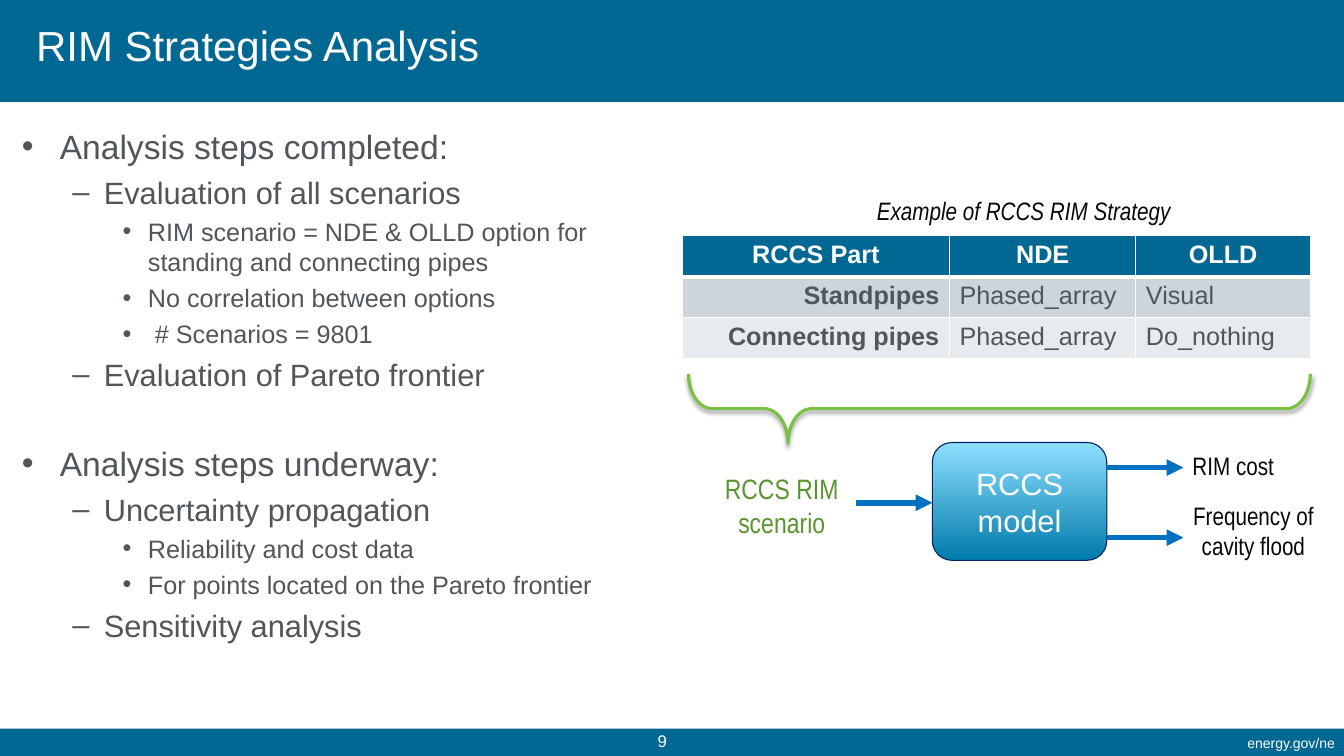
from lxml import etree
from pptx import Presentation
from pptx.dml.color import RGBColor
from pptx.enum.shapes import MSO_CONNECTOR, MSO_SHAPE
from pptx.enum.text import MSO_ANCHOR, PP_ALIGN
from pptx.oxml.ns import qn
from pptx.util import Pt

COLORS = {
    "blue": "006892", "white": "FFFFFF", "gray": "50565C", "black": "080808",
    "band_dark": "CCD4DC", "band_light": "E7EBEE", "arrow": "0070C0",
    "brace": "7AC143", "green": "5B9330", "outline": "002060",
    "model_bottom": "007BAB", "model_top": "8EDFFF", "shadow": "000000",
}
LEFT, CENTER, RIGHT = PP_ALIGN.LEFT, PP_ALIGN.CENTER, PP_ALIGN.RIGHT

# Content: (level, text)
STEPS_COMPLETED = [
    (0, "Analysis steps completed:"),
    (1, "Evaluation of all scenarios"),
    (2, "RIM scenario = NDE & OLLD option for standing and connecting pipes"),
    (2, "No correlation between options"),
    (2, " # Scenarios = 9801"),
    (1, "Evaluation of Pareto frontier"),
]
STEPS_UNDERWAY = [
    (0, "Analysis steps underway:"),
    (1, "Uncertainty propagation"),
    (2, "Reliability and cost data"),
    (2, "For points located on the Pareto frontier"),
    (1, "Sensitivity analysis"),
]
# Level formats: size, indent, hanging, bullet
LEVELS = [(24, 27, 27, "•"), (22, 58.5, 22.5, "–"), (18, 90, 18, "•")]
STRATEGY = [
    ("RCCS Part", "NDE", "OLLD"),
    ("Standpipes", "Phased_array", "Visual"),
    ("Connecting pipes", "Phased_array", "Do_nothing"),
]
COLUMN_WIDTHS = [190.8, 133.2, 124.6]
ROW_HEIGHT = 29.2
ROW_FILLS = ["blue", "band_dark", "band_light"]

# Labels: box, lines, alignment, wrap, font format
NARROW = {"name": "Arial Narrow", "size": 18, "color": "black"}
LABELS = [
    ((619.2, 136.1, 226.8, 26.6), ["Example of RCCS RIM Strategy"], LEFT, False,
     NARROW | {"italic": True}),
    ((510.5, 333.4, 95.8, 49.7), ["RCCS RIM", "scenario"], CENTER, False,
     NARROW | {"size": 20, "color": "green"}),
    ((833, 318.2, 95.8, 33.8), ["RIM cost"], CENTER, False, NARROW),
    ((839.5, 353.5, 111.6, 51.1), ["Frequency of cavity flood"], CENTER, True, NARROW),
    ((575.3, 521.3, 385.2, 18.7), ["energy.gov/ne"], RIGHT, True,
     {"size": 10, "color": "white"}),
    ((453.6, 518.4, 38.9, 21.6), ["9"], CENTER, True, {"size": 12, "color": "white"}),
]
MODEL_BOX = (666, 316.1, 124.6, 84.2)
ARROW_LENGTH = 54.7


def rgb(name):
    return RGBColor.from_string(COLORS[name])


def points(values):
    return [Pt(value) for value in values]


def add_run(paragraph, text, **formats):
    run = paragraph.add_run()
    run.text = text
    for key, value in ({"name": "Arial"} | formats).items():
        if key == "color":
            run.font.color.rgb = rgb(value)
        else:
            setattr(run.font, key, Pt(value) if key == "size" else value)


def add_text(slide, box, lines, alignment, wrap, formats):
    frame = slide.shapes.add_textbox(*points(box)).text_frame
    frame.word_wrap = wrap
    for index, line in enumerate(lines):
        paragraph = frame.add_paragraph() if index else frame.paragraphs[0]
        paragraph.alignment = alignment
        add_run(paragraph, line, **formats)
    return frame


def add_shape(slide, kind, box, fill=None, line=None, width=0):
    shape = slide.shapes.add_shape(kind, *points(box))
    shape.shadow.inherit = False
    if fill:
        shape.fill.solid()
        shape.fill.fore_color.rgb = rgb(fill)
    else:
        shape.fill.background()
    if line:
        shape.line.color.rgb = rgb(line)
        shape.line.width = Pt(width)
    else:
        shape.line.fill.background()
    return shape


def add_bullet(slide_paragraph, level):
    size, indent, hanging, bullet = LEVELS[level]
    properties = slide_paragraph._p.get_or_add_pPr()
    properties.set("marL", str(Pt(indent)))
    properties.set("indent", str(-Pt(hanging)))
    etree.SubElement(properties, qn("a:buFont"), typeface="Arial")
    etree.SubElement(properties, qn("a:buChar"), char=bullet)


def add_arrow(slide, x, y):
    arrow = slide.shapes.add_connector(
        MSO_CONNECTOR.STRAIGHT, *points((x, y, x + ARROW_LENGTH, y)))
    arrow.line.color.rgb = rgb("arrow")
    arrow.line.width = Pt(4)
    etree.SubElement(arrow.line._get_or_add_ln(), qn("a:tailEnd"), type="triangle")
    etree.SubElement(arrow._element.spPr, qn("a:effectLst"))


def add_borders(cell, bottom_width):
    properties = cell._tc.get_or_add_tcPr()
    widths = {"a:lnL": 1, "a:lnR": 1, "a:lnT": 1, "a:lnB": bottom_width}
    for position, (tag, width) in enumerate(widths.items()):
        border = etree.Element(qn(tag), w=str(Pt(width)))
        solid = etree.SubElement(border, qn("a:solidFill"))
        etree.SubElement(solid, qn("a:srgbClr"), val=COLORS["white"])
        properties.insert(position, border)


presentation = Presentation()
presentation.slide_width, presentation.slide_height = Pt(960), Pt(540)
slide = presentation.slides.add_slide(presentation.slide_layouts[6])

# Header and footer bands, title
for band in [(0, 0, 960, 72.7), (0, 520.5, 960, 19.5)]:
    add_shape(slide, MSO_SHAPE.RECTANGLE, band, "blue")
title = add_text(slide, (18.7, 0, 594.7, 71.3), ["RIM Strategies Analysis"], LEFT,
                 True, {"size": 30, "color": "white"})
title.vertical_anchor = MSO_ANCHOR.MIDDLE
title.paragraphs[0].line_spacing = Pt(28)

# Analysis steps
body = slide.shapes.add_textbox(*points((8.6, 86.4, 471.6, 401))).text_frame
body.word_wrap = True
for index, (level, text) in enumerate(STEPS_COMPLETED + STEPS_UNDERWAY):
    paragraph = body.add_paragraph() if index else body.paragraphs[0]
    size = LEVELS[level][0]
    section_break = index == len(STEPS_COMPLETED)
    paragraph.level = level
    paragraph.space_before = Pt(36 if section_break else round(size * 0.23, 1))
    add_bullet(paragraph, level)
    add_run(paragraph, text, size=size, color="gray")

# Strategy table
table = slide.shapes.add_table(
    len(STRATEGY), len(COLUMN_WIDTHS),
    *points((487.4, 168.5, sum(COLUMN_WIDTHS), ROW_HEIGHT * len(STRATEGY)))).table
for column, width in zip(table.columns, COLUMN_WIDTHS):
    column.width = Pt(width)
for row, texts in enumerate(STRATEGY):
    table.rows[row].height = Pt(ROW_HEIGHT)
    header = row == 0
    for column, text in enumerate(texts):
        cell = table.cell(row, column)
        cell.fill.solid()
        cell.fill.fore_color.rgb = rgb(ROW_FILLS[row])
        add_borders(cell, 3 if header else 1)
        paragraph = cell.text_frame.paragraphs[0]
        paragraph.alignment = CENTER if header else LEFT if column else RIGHT
        add_run(paragraph, text, size=18, bold=header or column == 0,
                color="white" if header else "gray")

# Model box with its input and outputs
model = add_shape(slide, MSO_SHAPE.ROUNDED_RECTANGLE, MODEL_BOX, None, "outline", 0.75)
model.fill.gradient()
model.fill.gradient_angle = 90
for stop, color in zip(model.fill.gradient_stops, ["model_bottom", "model_top"]):
    stop.color.rgb = rgb(color)
model.text_frame.word_wrap = True
model.text_frame.vertical_anchor = MSO_ANCHOR.MIDDLE
model.text_frame.paragraphs[0].alignment = CENTER
add_run(model.text_frame.paragraphs[0], "RCCS model", size=22, color="white")
model_left, model_right = MODEL_BOX[0], MODEL_BOX[0] + MODEL_BOX[2]
for x, y in [(model_left - ARROW_LENGTH, 359.1), (model_right, 334), (model_right, 384)]:
    add_arrow(slide, x, y)

# Labels
for label in LABELS:
    add_text(slide, *label)

# Brace from the table to the scenario
brace = add_shape(slide, MSO_SHAPE.RIGHT_BRACE, (689, 69.8, 49.7, 444.2), None, "brace", 2.25)
brace.rotation = 90
brace.adjustments[0], brace.adjustments[1] = 0.34, 0.84
effects = brace._element.spPr.find(qn("a:effectLst"))
shadow = etree.SubElement(effects, qn("a:outerShdw"), blurRad=str(Pt(3.1)),
                          dist=str(Pt(1.6)), dir="5400000", rotWithShape="0")
shadow_color = etree.SubElement(shadow, qn("a:srgbClr"), val=COLORS["shadow"])
etree.SubElement(shadow_color, qn("a:alpha"), val="38000")

presentation.save("out.pptx")
